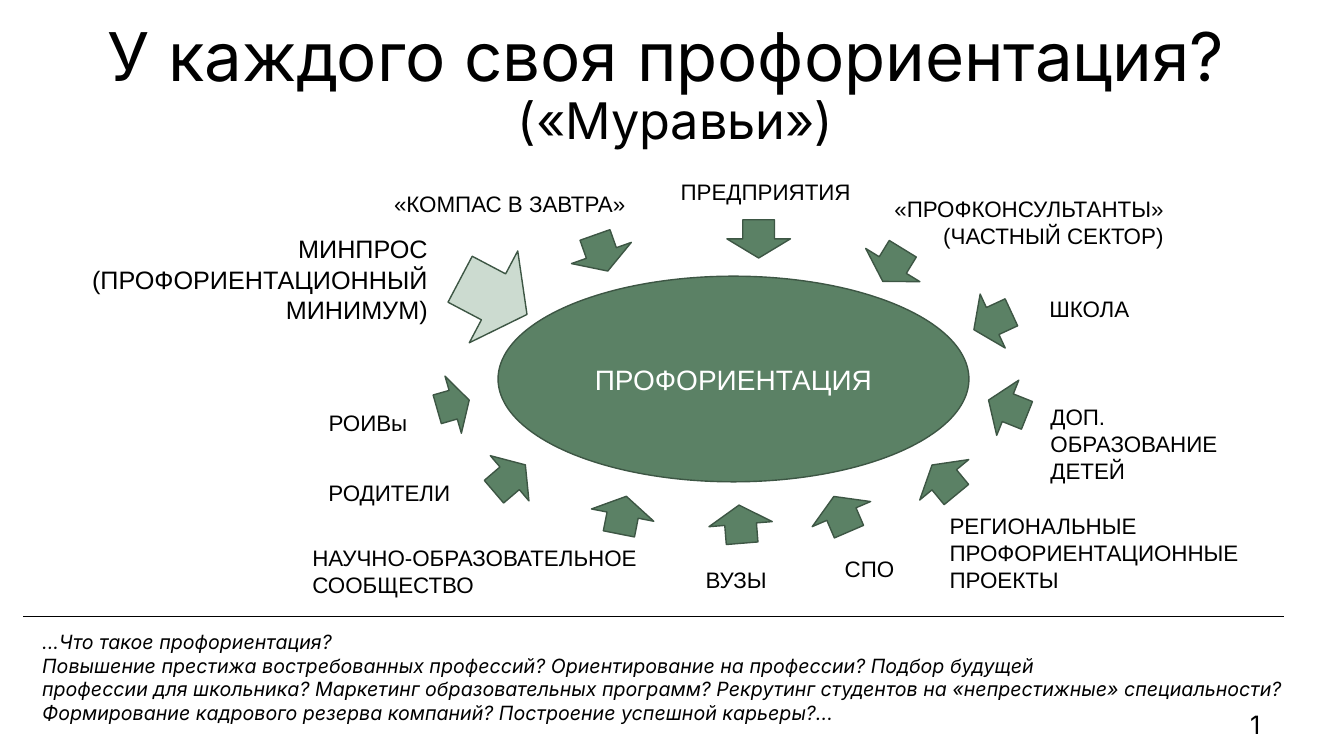
from lxml import etree
from pptx import Presentation
from pptx.dml.color import RGBColor
from pptx.enum.shapes import MSO_CONNECTOR, MSO_SHAPE
from pptx.enum.text import MSO_ANCHOR, PP_ALIGN
from pptx.oxml.ns import qn
from pptx.util import Inches, Pt

LEFT, MID, RIGHT = PP_ALIGN.LEFT, PP_ALIGN.CENTER, PP_ALIGN.RIGHT
TOP, CENTER = MSO_ANCHOR.TOP, MSO_ANCHOR.MIDDLE
OVAL, ARROW = MSO_SHAPE.OVAL, MSO_SHAPE.DOWN_ARROW
LINE = MSO_CONNECTOR.STRAIGHT

BLACK = RGBColor(0x00, 0x00, 0x00)
WHITE = RGBColor(0xFF, 0xFF, 0xFF)
GREEN = RGBColor(0x5B, 0x81, 0x65)
PALE = RGBColor(0xCC, 0xDB, 0xD0)
DARK = RGBColor(0x3D, 0x56, 0x44)

CELL = Inches(0.1)  # side of one square grid cell

# left, top, width, height in cells, text, alignment
LABELS = [
    (65.1, 17.2, 21.7, 3.7, "ПРЕДПРИЯТИЯ", MID),
    (83, 18.9, 33.4, 5.6, "«ПРОФКОНСУЛЬТАНТЫ»\n(ЧАСТНЫЙ СЕКТОР)", RIGHT),
    (103.1, 28.8, 15.1, 3.2, "ШКОЛА", LEFT),
    (103.2, 39.5, 19.5, 9.1, "ДОП. ОБРАЗОВАНИЕ\vДЕТЕЙ", LEFT),
    (93.2, 50.3, 31.7, 9.1, "РЕГИОНАЛЬНЫЕ ПРОФОРИЕНТАЦИОННЫЕ ПРОЕКТЫ", LEFT),
    (82.8, 54.6, 10.7, 3.2, "СПО", LEFT),
    (69, 55.7, 14, 3.2, "ВУЗЫ", LEFT),
    (30, 53.5, 36, 5.6, "НАУЧНО-ОБРАЗОВАТЕЛЬНОЕ СООБЩЕСТВО", LEFT),
    (31.6, 47, 17, 3.2, "РОДИТЕЛИ", LEFT),
    (31.6, 40.1, 13.1, 3.2, "РОИВы", LEFT),
    (38.1, 18.4, 26.5, 3.2, "«КОМПАС В ЗАВТРА»", LEFT),
]

# left, top, width, height in cells, turn in degrees
ARROWS = [
    (72.1, 21.8, 6.3, 3.8, 0),
    (85.4, 24.4, 6.3, 3.8, 31.5),
    (95.5, 29.8, 5.9, 4.1, 65.1),
    (97, 38.4, 5.9, 4.1, 111.8),
    (90.5, 45.7, 6.3, 3.8, 140.5),
    (80.3, 49.1, 6.3, 3.8, 156.7),
    (70.3, 50.1, 6.3, 3.8, 175.4),
    (58.6, 49.2, 6.3, 3.8, 191.2),
    (47.6, 45.4, 5.9, 4.1, 229.5),
    (42, 38.5, 5.9, 3.3, 254),
    (56.5, 23.2, 6.3, 3.8, 340.5),
]


def write(frame, text, size=16, font="Arial", color=BLACK, italic=False,
          align=LEFT, anchor=TOP, space=None, inset=(0.1, 0.05), small=None):
    """Fill a frame: \\n parts paragraphs, \\v parts lines; small sizes later lines."""
    frame.word_wrap = True
    frame.vertical_anchor = anchor
    frame.margin_left = frame.margin_right = Inches(inset[0])
    frame.margin_top = frame.margin_bottom = Inches(inset[1])
    for i, part in enumerate(text.split("\n")):
        para = frame.add_paragraph() if i else frame.paragraphs[0]
        para.alignment = align
        para.line_spacing = space
        for j, line in enumerate(part.split("\v")):
            if j:
                para.add_line_break()
            run = para.add_run()
            run.text = line
            run.font.size = Pt(small if j and small else size)
            run.font.name = font
            run.font.italic = italic
            run.font.color.rgb = color


class Board:
    """Draws on one slide, with lengths in grid cells."""

    def __init__(self, slide, edge=DARK):
        self.shapes = slide.shapes
        self.edge = edge

    def scale(self, *cells):
        return [round(n * CELL) for n in cells]

    def label(self, x, y, w, h, text, **style):
        box = self.shapes.add_textbox(*self.scale(x, y, w, h))
        write(box.text_frame, text, **style)

    def shape(self, kind, x, y, w, h, fill=GREEN, turn=0):
        item = self.shapes.add_shape(kind, *self.scale(x, y, w, h))
        item.shadow.inherit = False
        item.fill.solid()
        item.fill.fore_color.rgb = fill
        item.line.color.rgb = self.edge
        item.line.width = Pt(1)
        item.rotation = turn
        return item

    def rule(self, x, y, end):
        line = self.shapes.add_connector(LINE, *self.scale(x, y, end, y))
        line.line.color.rgb = BLACK
        line.line.width = Pt(0.5)
        etree.SubElement(line._element.spPr, qn("a:effectLst"))


def main():
    deck = Presentation()
    deck.slide_width, deck.slide_height = Inches(13.33), Inches(7.5)
    slide = deck.slides.add_slide(deck.slide_layouts[6])
    board = Board(slide)

    board.label(6.9, 2.3, 120.2, 15.1,
                "У каждого своя профориентация? \v(«Муравьи»)",
                size=48, small=36, font="Inter", align=MID, space=0.9,
                inset=(0, 0))

    hub = board.shape(OVAL, 49.4, 27.4, 46.7, 20.4)
    write(hub.text_frame, "ПРОФОРИЕНТАЦИЯ", size=20, color=WHITE,
          align=MID, anchor=CENTER)
    for *place, turn in ARROWS:
        board.shape(ARROW, *place, turn=turn)
    for *place, text, align in LABELS:
        board.label(*place, text, align=align)

    board.shape(ARROW, 43.8, 25.7, 10.3, 7.5, fill=PALE, turn=297.8)
    board.label(7.5, 22.7, 35.9, 10.1,
                "МИНПРОС\n(ПРОФОРИЕНТАЦИОННЫЙ МИНИМУМ)",
                size=18, align=RIGHT)

    board.rule(2.3, 61.1, 127.3)
    board.label(3.2, 63.9, 127, 6.6,
                "...Что такое профориентация?\n"
                "Повышение престижа востребованных профессий? "
                "Ориентирование на профессии? Подбор будущей \v"
                "профессии для школьника? Маркетинг образовательных программ? "
                "Рекрутинг студентов на «непрестижные» специальности? "
                "Формирование кадрового резерва компаний? "
                "Построение успешной карьеры?...",
                size=14, font="Inter", italic=True, anchor=CENTER)
    board.label(123, 69.9, 6.9, 1.7, "1", size=18, font="Inter")

    deck.save("out.pptx")


if __name__ == "__main__":
    main()
